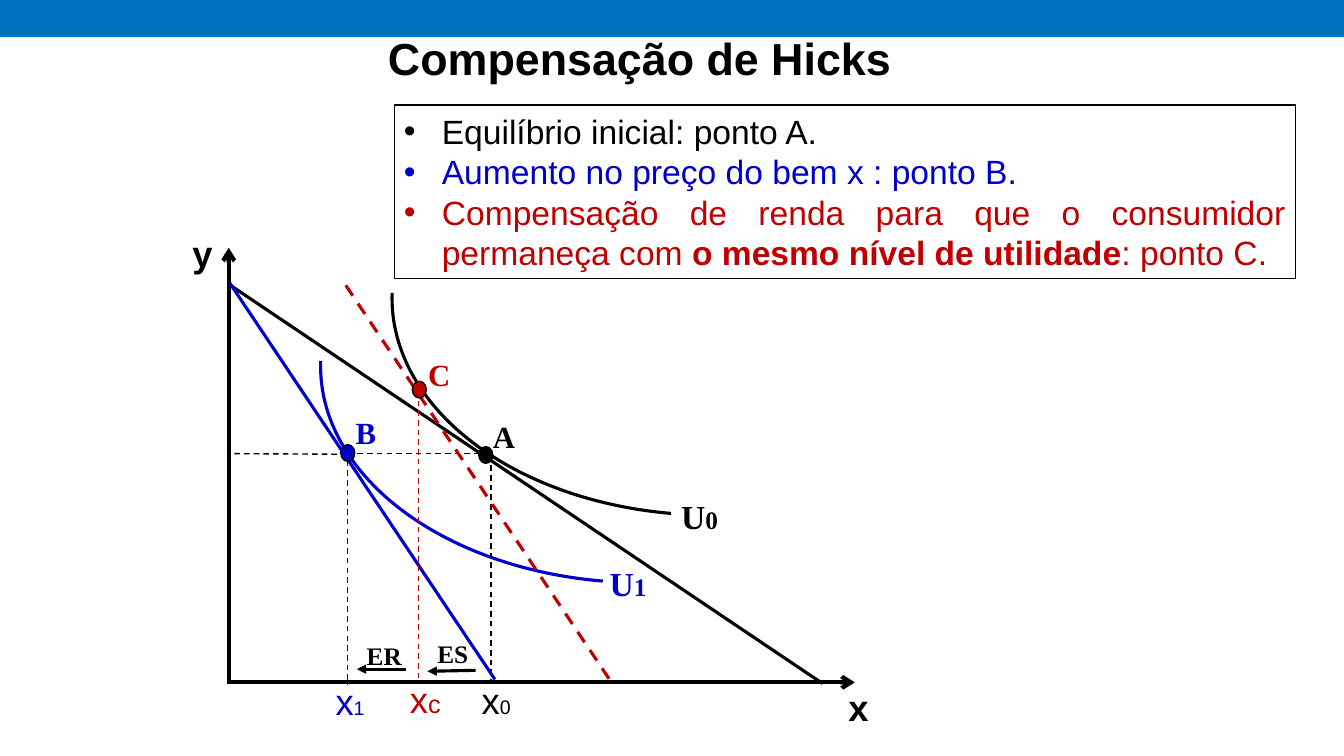
from lxml import etree
from pptx import Presentation
from pptx.dml.color import RGBColor
from pptx.enum.dml import MSO_LINE
from pptx.enum.shapes import MSO_CONNECTOR, MSO_SHAPE
from pptx.enum.text import MSO_ANCHOR, PP_ALIGN
from pptx.oxml.ns import qn
from pptx.util import Pt

rgb = RGBColor.from_string
BLACK, BLUE, RED = "000000", "0000CC", "C00000"
SERIF = "Times New Roman"

prs = Presentation()
prs.slide_width, prs.slide_height = Pt(960), Pt(540)
s = prs.slides.add_slide(prs.slide_layouts[6])


def add_text(p, text, size=24, color=BLACK, bold=False, font="Arial"):
    r = p.add_run()
    r.text = text
    r.font.size, r.font.bold, r.font.name = Pt(size), bold, font
    r.font.color.rgb = rgb(color)


def add_line(x1, y1, x2, y2, color=BLACK, width=2.25, dash=False, head=None):
    c = s.shapes.add_connector(MSO_CONNECTOR.STRAIGHT, Pt(x1), Pt(y1), Pt(x2), Pt(y2))
    c.line.color.rgb = rgb(color)
    c.line.width = Pt(width)
    if dash:
        c.line.dash_style = MSO_LINE.DASH
    if head:
        etree.SubElement(c.line._get_or_add_ln(), qn("a:tailEnd"), type=head)
    etree.SubElement(c._element.spPr, qn("a:effectLst"))


band = s.shapes.add_shape(MSO_SHAPE.RECTANGLE, 0, Pt(-2), prs.slide_width, Pt(28.6))
band.shadow.inherit = False
band.fill.solid()
band.fill.fore_color.rgb = rgb("0070C0")
band.line.fill.background()

title = s.shapes.add_textbox(Pt(177), Pt(2), Pt(560), Pt(62))
tf = title.text_frame
tf.word_wrap = True
tf.vertical_anchor = MSO_ANCHOR.BOTTOM
tf.paragraphs[0].alignment = PP_ALIGN.CENTER
add_text(tf.paragraphs[0], "Compensação de Hicks", size=32, bold=True)

add_line(247.7, 324.5, 162, 324, width=1, dash=True)
add_line(248.4, 324, 350.6, 324, width=1, dash=True)
add_line(163.4, 487.4, 163.4, 177, width=3, head="arrow")
add_line(162, 487.4, 610.6, 487.4, width=3, head="arrow")

curves = [
    (BLACK, 280, 58.3, 455, 309.6),
    (BLUE, 229, 107.3, 459.4, 308.9),
]
for color, x, y, w, h in curves:
    sp = s.shapes.add_shape(MSO_SHAPE.ARC, Pt(x), Pt(y), Pt(w), Pt(h))
    sp.adjustments[0], sp.adjustments[1] = 168.244, 0.593
    sp.rotation = 180
    sp.shadow.inherit = False
    sp.fill.background()
    sp.line.color.rgb = rgb(color)
    sp.line.width = Pt(2.25)

equilibria = [
    (BLACK, (163.4, 203, 587.5, 488.2), (347, 325), (350.6, 325.4, 485.3)),
    (BLUE, (164.2, 202.3, 353.5, 485.3), (248.4, 323.6), (248.4, 329, 489.6)),
    (RED, (247, 203.8, 436.3, 486.7), (299.5, 278.3), (298.8, 272.2, 485.3)),
]
for color, budget, (cx, cy), (drop_x, top, bottom) in equilibria:
    add_line(*budget, color=color, dash=color == RED)
    dot = s.shapes.add_shape(MSO_SHAPE.OVAL, Pt(cx - 5), Pt(cy - 6), Pt(10), Pt(12))
    dot.shadow.inherit = False
    dot.fill.solid()
    dot.fill.fore_color.rgb = rgb(color)
    dot.line.color.rgb = rgb(BLACK)
    dot.line.width = Pt(1)
    add_line(drop_x, top, drop_x, bottom, color=color, width=1, dash=True)

add_line(339.8, 478.8, 305.3, 479.5, head="triangle")
add_line(290.2, 478, 254.9, 478, head="triangle")

axis = dict(size=26, bold=True)
good = dict(size=26)
point = dict(size=22, bold=True, font=SERIF)
utility = dict(size=24, bold=True, font=SERIF)
effect = dict(size=18, bold=True, font=SERIF)
labels = [
    ("y", "", 0, 130.3, 161.3, 41, BLACK, axis),
    ("x", "", 0, 599, 486, 41, BLACK, axis),
    ("U", "0", 18, 479.5, 350.6, 57, BLACK, utility),
    ("U", "1", 18, 428.4, 398.9, 57, BLUE, utility),
    ("A", "", 0, 344.9, 294.5, 29, BLACK, point),
    ("B", "", 0, 247, 292.3, 29, BLUE, point),
    ("C", "", 0, 298.8, 250.6, 29, RED, point),
    ("x", "0", 14, 337, 481, 41, BLACK, good),
    ("x", "1", 14, 232.6, 481.7, 41, BLUE, good),
    ("x", "c", 18, 285.8, 480.2, 41, RED, good),
    ("ES", "", 0, 305.3, 452.2, 42, BLACK, effect),
    ("ER", "", 0, 254.9, 453.6, 42, BLACK, effect),
]
for text, index, index_size, x, y, w, color, style in labels:
    box = s.shapes.add_textbox(Pt(x), Pt(y), Pt(w), Pt(style["size"] * 1.5))
    box.text_frame.word_wrap = True
    p = box.text_frame.paragraphs[0]
    add_text(p, text, color=color, **style)
    if index:
        add_text(p, index, color=color, **{**style, "size": index_size})

steps = s.shapes.add_shape(MSO_SHAPE.RECTANGLE, Pt(281.5), Pt(75), Pt(643.7), Pt(123.8))
steps.shadow.inherit = False
steps.fill.background()
steps.line.color.rgb = rgb(BLACK)
steps.line.width = Pt(0.75)
tf = steps.text_frame
tf.word_wrap = True
items = [
    (BLACK, [("Equilíbrio inicial: ponto A.", False)]),
    (BLUE, [("Aumento no preço do bem x : ponto B.", False)]),
    (RED, [("Compensação de renda para que o consumidor permaneça com ", False),
           ("o mesmo nível de utilidade", True), (": ponto C.", False)]),
]
for i, (color, runs) in enumerate(items):
    p = tf.add_paragraph() if i else tf.paragraphs[0]
    p.alignment = PP_ALIGN.JUSTIFY
    pPr = p._p.get_or_add_pPr()
    pPr.set("marL", str(Pt(27)))
    pPr.set("indent", str(Pt(-27)))
    etree.SubElement(pPr, qn("a:buFont"), typeface="Arial")
    etree.SubElement(pPr, qn("a:buChar"), char="•")
    for text, bold in runs:
        add_text(p, text, color=color, bold=bold)

prs.save("out.pptx")
